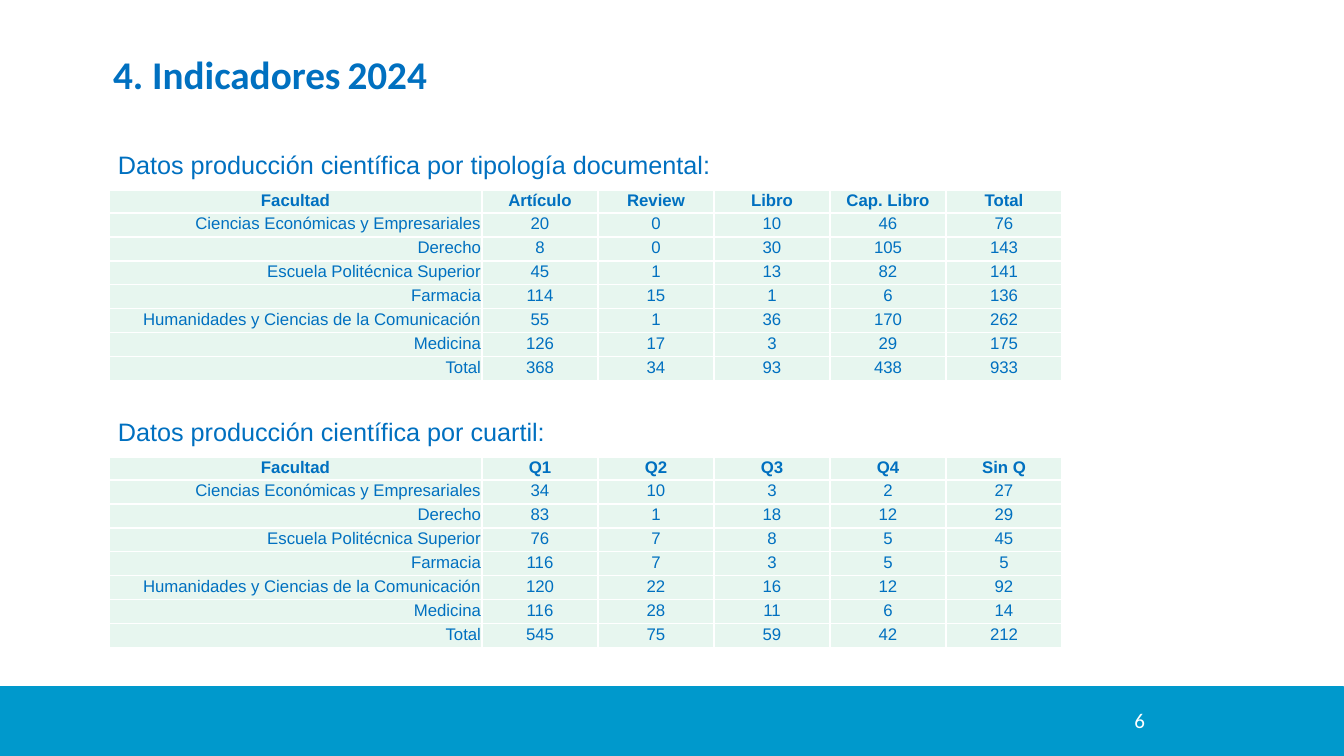
from lxml import etree
from pptx import Presentation
from pptx import util as u
from pptx.dml.color import RGBColor
from pptx.enum import shapes, text
from pptx.oxml import ns

BLUE = RGBColor(0x00, 0x70, 0xC0)
BAND = RGBColor(0x00, 0x99, 0xCC)
MINT = RGBColor(0xE7, 0xF6, 0xEF)
WHITE = RGBColor(0xFF, 0xFF, 0xFF)
BLACK = RGBColor(0x00, 0x00, 0x00)

FACULTIES = [
    "Ciencias Económicas y Empresariales",
    "Derecho",
    "Escuela Politécnica Superior",
    "Farmacia",
    "Humanidades y Ciencias de la Comunicación",
    "Medicina",
    "Total",
]
SECTIONS = [
    (
        144,
        "Datos producción científica por tipología documental:",
        ["Artículo", "Review", "Libro", "Cap. Libro", "Total"],
        [
            [20, 0, 10, 46, 76],
            [8, 0, 30, 105, 143],
            [45, 1, 13, 82, 141],
            [114, 15, 1, 6, 136],
            [55, 1, 36, 170, 262],
            [126, 17, 3, 29, 175],
            [368, 34, 93, 438, 933],
        ],
    ),
    (
        411,
        "Datos producción científica por cuartil:",
        ["Q1", "Q2", "Q3", "Q4", "Sin Q"],
        [
            [34, 10, 3, 2, 27],
            [83, 1, 18, 12, 29],
            [76, 7, 8, 5, 45],
            [116, 7, 3, 5, 5],
            [120, 22, 16, 12, 92],
            [116, 28, 11, 6, 14],
            [545, 75, 59, 42, 212],
        ],
    ),
]


def px(*lengths):
    return [u.Emu(round(length * 914400 / 100.8)) for length in lengths]


def style(font, name, size, color, bold=False):
    font.name = name
    font.size = u.Pt(size)
    font.color.rgb = color
    font.bold = bold


presentation = Presentation()
presentation.slide_width, presentation.slide_height = px(1344, 756)
slide = presentation.slides.add_slide(presentation.slide_layouts[5])

footer = slide.shapes.add_shape(shapes.MSO_SHAPE.RECTANGLE, *px(0, 687, 1344, 69))
footer.shadow.inherit = False
footer.fill.solid()
footer.fill.fore_color.rgb = BAND
footer.line.color.rgb = BAND
footer.line.width = u.Pt(0.75)

number = slide.shapes.add_textbox(*px(935, 711, 220, 33))
frame = number.text_frame
frame.word_wrap = True
frame.margin_left, frame.margin_top, frame.margin_right, frame.margin_bottom = px(10, 1, 10, 1)
frame.text = "6"
paragraph = frame.paragraphs[0]
paragraph.alignment = text.PP_ALIGN.RIGHT
paragraph.line_spacing = u.Pt(15)
style(paragraph.runs[0].font, "Calibri", 15, WHITE)

title = slide.shapes.title
title.left, title.top, title.width, title.height = px(103, 45, 465, 57)
title.text_frame.vertical_anchor = text.MSO_ANCHOR.TOP
title.text_frame.auto_size = text.MSO_AUTO_SIZE.NONE
paragraph = title.text_frame.paragraphs[0]
paragraph.alignment = text.PP_ALIGN.LEFT
for words, name, size, color, bold in [
    ("4. Indicadores", "Calibri", 28, BLUE, True),
    (" ", "Arial", 18, BLACK, False),
    ("2024", "Calibri", 28, BLUE, True),
]:
    run = paragraph.add_run()
    run.text = words
    style(run.font, name, size, color, bold)

for top, caption, headers, values in SECTIONS:
    heading = slide.shapes.add_textbox(*px(108, top, 639, 40))
    heading.text_frame.word_wrap = True
    heading.text_frame.text = caption
    style(heading.text_frame.paragraphs[0].runs[0].font, "Arial", 18, BLUE)

    rows = [["Facultad", *headers]]
    rows += [[faculty, *counts] for faculty, counts in zip(FACULTIES, values)]
    table = slide.shapes.add_table(len(rows), 6, *px(109, top + 46, 953, 191)).table
    for index, column in enumerate(table.columns):
        column.width = px(116 if index else 373)[0]
    for index, row in enumerate(table.rows):
        row.height = px(24 if index else 23)[0]

    for row_index, row in enumerate(rows):
        for column_index, value in enumerate(row):
            cell = table.cell(row_index, column_index)
            cell.margin_left, cell.margin_top, cell.margin_right, cell.margin_bottom = px(1, 1, 1, 0)
            properties = cell._tc.get_or_add_tcPr()
            for side in ("lnL", "lnR", "lnT", "lnB"):
                border = etree.SubElement(properties, ns.qn(f"a:{side}"), w=str(u.Pt(1)))
                fill = etree.SubElement(border, ns.qn("a:solidFill"))
                etree.SubElement(fill, ns.qn("a:srgbClr"), val=str(WHITE))
            cell.fill.solid()
            cell.fill.fore_color.rgb = MINT
            cell.text_frame.text = str(value)
            paragraph = cell.text_frame.paragraphs[0]
            is_faculty = row_index > 0 and column_index == 0
            paragraph.alignment = text.PP_ALIGN.RIGHT if is_faculty else text.PP_ALIGN.CENTER
            style(paragraph.runs[0].font, "Arial", 12, BLUE, row_index == 0)

presentation.save("out.pptx")
